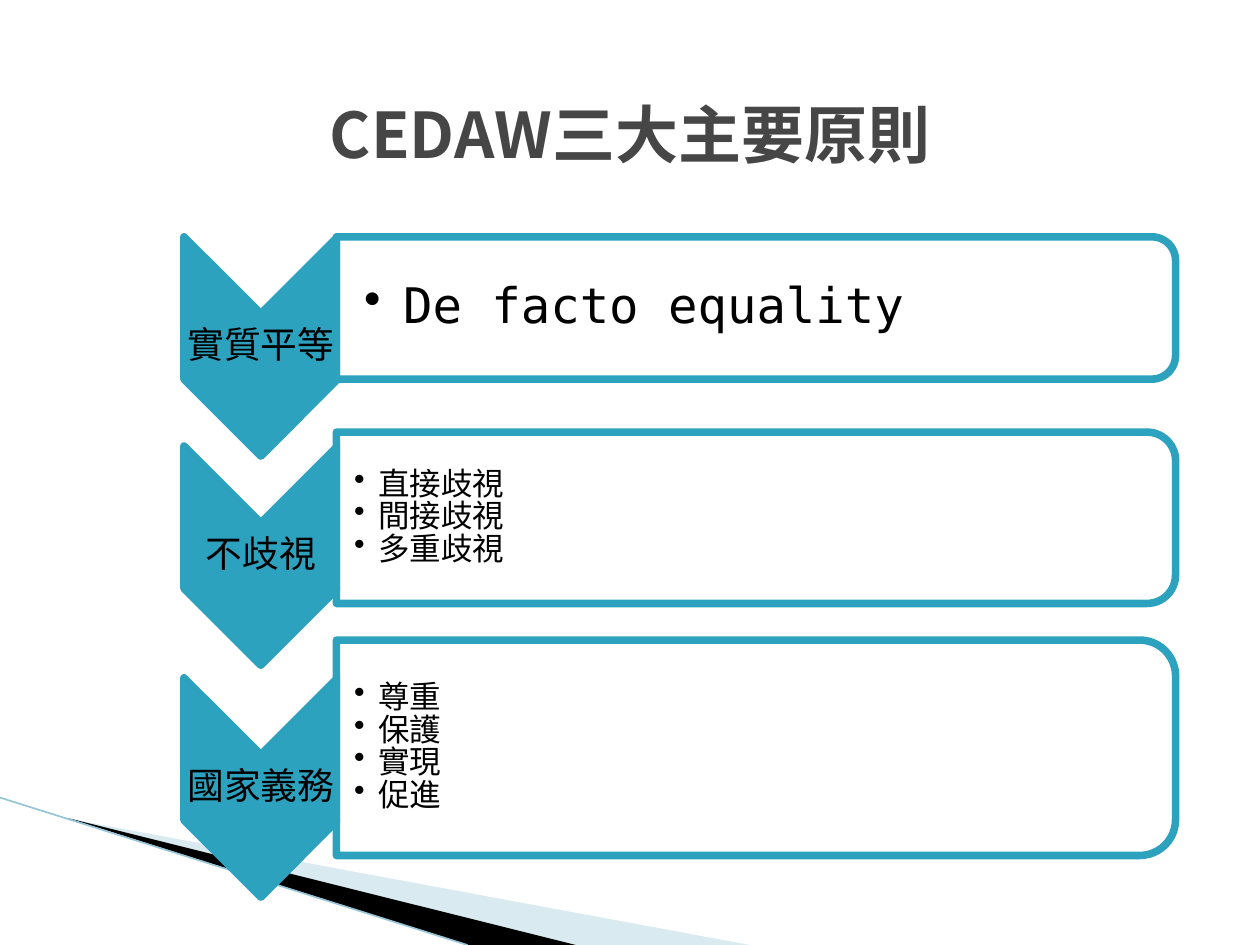
import pptx
import pptx.util
import pptx.dml.color
import pptx.enum.shapes
import pptx.enum.text
import pptx.oxml
import pptx.oxml.ns
from lxml import etree

Inches = pptx.util.Inches
Pt = pptx.util.Pt
Shape = pptx.enum.shapes.MSO_SHAPE
Align = pptx.enum.text.PP_ALIGN

HUES = {"teal": "2DA2BF", "mist": "A0CBDC", "edge": "97C5D8",
        "title": "464646", "black": "000000", "white": "FFFFFF"}
CJK = "Noto Sans CJK SC"
MONO = "DejaVu Sans Mono"


def hue(name):
    return pptx.dml.color.RGBColor.from_string(HUES[name])


def add_tag(parent, tag, **attrs):
    node = etree.SubElement(parent, pptx.oxml.ns.qn(tag))
    for key, value in attrs.items():
        node.set(key, str(value))
    return node


class Deck:
    def __init__(self):
        self.prs = pptx.Presentation()
        self.prs.slide_width, self.prs.slide_height = Inches(10), Inches(7.5)
        self.slide = self.prs.slides.add_slide(self.prs.slide_layouts[6])
        self.shapes = self.slide.shapes

    def paint(self, shape, color, alpha=100):
        shape.shadow.inherit = False
        shape.fill.solid()
        shape.fill.fore_color.rgb = hue(color)
        if alpha < 100:
            fill = shape.fill._xPr.find(pptx.oxml.ns.qn("a:solidFill"))
            add_tag(fill[0], "a:alpha", val=alpha * 1000)

    def wedge(self, points, color, alpha=100):
        spots = [(Inches(x), Inches(y)) for x, y in points]
        form = self.shapes.build_freeform(*spots[0])
        form.add_line_segments(spots[1:], close=True)
        shape = form.convert_to_shape()
        self.paint(shape, color, alpha)
        shape.line.fill.background()

    def rule(self, start, end, color, width):
        ends = [Inches(v) for v in (*start, *end)]
        line = self.shapes.add_connector(
            pptx.enum.shapes.MSO_CONNECTOR.STRAIGHT, *ends)
        line.line.color.rgb = hue(color)
        line.line.width = Pt(width)
        add_tag(line._element.spPr, "a:effectLst")

    def turned(self, kind, left, top, width, height, color, alpha=100):
        """Add a shape turned by 90 degrees; the box given is the one seen."""
        x = left + (width - height) / 2
        y = top + (height - width) / 2
        shape = self.shapes.add_shape(
            kind, Inches(x), Inches(y), Inches(height), Inches(width))
        shape.rotation = 90
        self.paint(shape, color, alpha)
        shape.line.color.rgb = hue("teal")
        shape.line.width = Pt(4.33)
        add_tag(shape.line._ln, "a:round")

    def text(self, box, lines, size, font=CJK, color="black", bold=False,
             align=Align.CENTER, inset=0.01, pad=None, hang=0, space=0.9):
        """Add centred lines, or bulleted ones if a hanging indent is given."""
        frame = self.shapes.add_textbox(*map(Inches, box)).text_frame
        frame.word_wrap = True
        frame.vertical_anchor = pptx.enum.text.MSO_ANCHOR.MIDDLE
        frame.margin_left = Inches(inset if pad is None else pad)
        frame.margin_right = Inches(inset)
        frame.margin_top = frame.margin_bottom = Inches(inset)
        for i, line in enumerate(lines):
            para = frame.add_paragraph() if i else frame.paragraphs[0]
            para.alignment = align
            para.line_spacing = space
            if hang:
                props = para._p.get_or_add_pPr()
                props.set("marL", str(Inches(hang)))
                props.set("indent", str(-Inches(hang)))
                add_tag(props, "a:buChar", char="•")
            run = para.add_run()
            run.text = line
            run.font.size = Pt(size)
            run.font.bold = bold
            run.font.name = font
            run.font.color.rgb = hue(color)
            add_tag(run._r.get_or_add_rPr(), "a:ea", typeface=font)


def main():
    deck = Deck()
    deck.wedge([(0.55, 6.5), (5.95, 7.5), (4.56, 7.5)], "mist", 40)
    deck.wedge([(0.53, 6.49), (4.57, 7.5), (3.72, 7.5)], "black")
    deck.rule((0, 6.33), (3.71, 7.5), "edge", 0.95)
    deck.text((0.5, 0.5, 9, 1.12), ["CEDAW三大主要原則"], 36,
              color="title", bold=True, space=1.0)

    big = dict(size=28, font=MONO, inset=0.02, pad=0.22, hang=0.31)
    small = dict(size=18, pad=0.14, hang=0.19, space=0.86)
    # name, arrow top, panel top, panel height, points, text style
    rows = [
        ("實質平等", 1.88, 1.88, 1.13, ["De facto equality"], big),
        ("不歧視", 3.54, 3.43, 1.36,
         ["直接歧視", "間接歧視", "多重歧視"], small),
        ("國家義務", 5.38, 5.08, 1.71,
         ["尊重", "保護", "實現", "促進"], small),
    ]
    for name, top, panel, height, points, style in rows:
        deck.turned(Shape.CHEVRON, 1.46, top, 1.22, 1.74, "teal")
        deck.text((1.46, top + 0.61, 1.22, 0.52), [name], 21)
        deck.turned(Shape.ROUND_2_SAME_RECTANGLE, 2.67, panel, 6.66, height,
                    "white", 90)
        deck.text((2.67, panel + 0.06, 6.6, height - 0.12), points,
                  align=Align.LEFT, **style)
    deck.prs.save("out.pptx")


if __name__ == "__main__":
    main()
